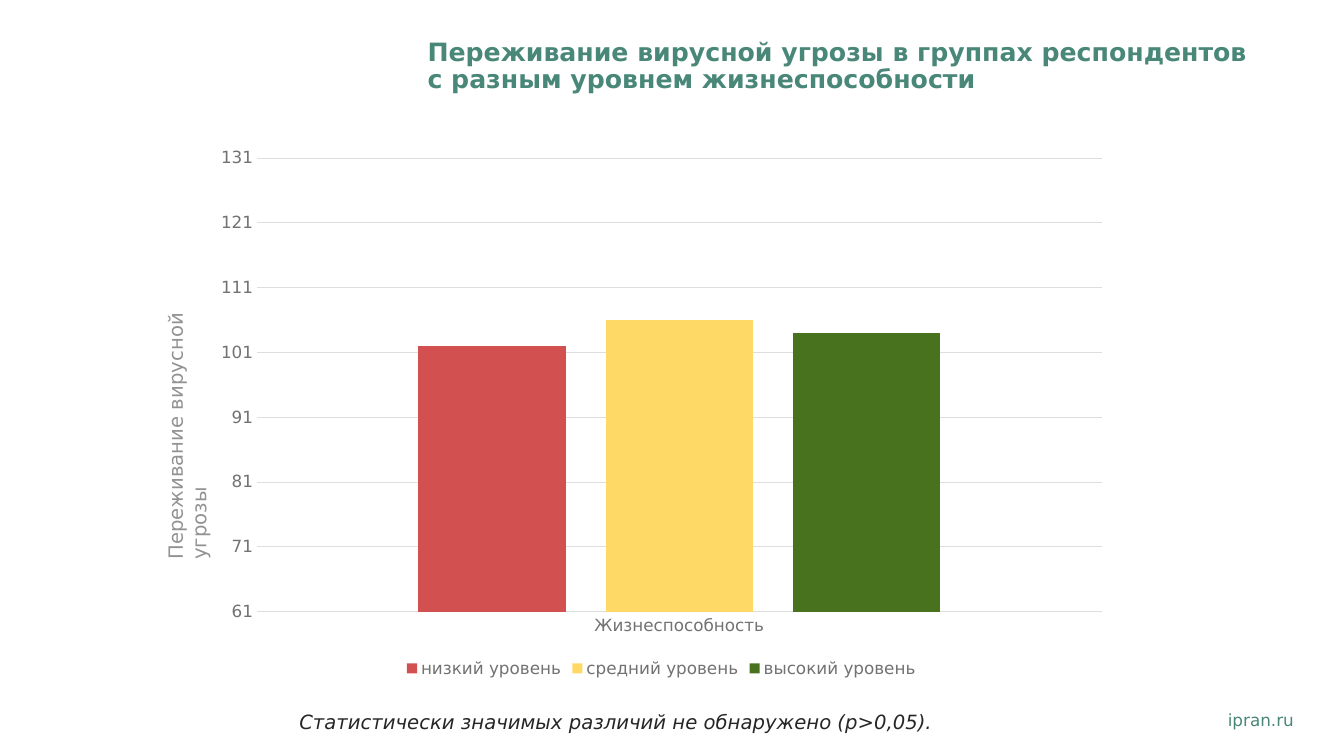
from pptx import Presentation
from pptx import util as u
from pptx.chart.data import CategoryChartData
from pptx.dml.color import RGBColor
from pptx.enum import chart as charts, text

FONT = "DejaVu Sans"
COLORS = {
    "green": "498779",
    "ink": "262626",
    "axis": "727272",
    "label": "929292",
    "grid": "DEDEDE",
}
LEVELS = [
    ("низкий уровень", 102, "D25050"),
    ("средний уровень", 106, "FFD966"),
    ("высокий уровень", 104, "49721E"),
]


def inches(*box):
    return [u.Inches(value) for value in box]


def style_font(font, size, color, bold=False, italic=False):
    font.name = FONT
    font.size = u.Pt(size)
    font.bold = bold
    font.italic = italic
    font.color.rgb = RGBColor.from_string(COLORS[color])


def add_title(slide, box, wording):
    title = slide.shapes.title
    title.left, title.top, title.width, title.height = inches(*box)
    frame = title.text_frame
    frame.word_wrap = True
    frame.auto_size = text.MSO_AUTO_SIZE.NONE
    frame.vertical_anchor = text.MSO_ANCHOR.TOP
    para = frame.paragraphs[0]
    para.alignment = text.PP_ALIGN.LEFT
    para.line_spacing = 0.9
    span = para.add_run()
    span.text = wording
    style_font(span.font, 18, "green", bold=True)


def add_label(slide, box, wording, size, color, italic=False, rotation=0):
    label = slide.shapes.add_textbox(*inches(*box))
    label.rotation = rotation
    frame = label.text_frame
    frame.word_wrap = True
    frame.auto_size = text.MSO_AUTO_SIZE.SHAPE_TO_FIT_TEXT
    span = frame.paragraphs[0].add_run()
    span.text = wording
    style_font(span.font, size, color, italic=italic)


def style_line(line):
    line.color.rgb = RGBColor.from_string(COLORS["grid"])
    line.width = u.Pt(0.75)


def add_level_chart(slide, box):
    data = CategoryChartData()
    data.categories = ["Жизнеспособность"]
    for name, value, _ in LEVELS:
        data.add_series(name, [value])
    chart = slide.shapes.add_chart(
        charts.XL_CHART_TYPE.COLUMN_CLUSTERED, *inches(*box), data).chart
    chart.has_title = False
    style_font(chart.font, 10, "ink")

    # Columns
    plot = chart.plots[0]
    plot.vary_by_categories = False
    plot.gap_width = 219
    plot.overlap = -27
    for series, (_, _, color) in zip(plot.series, LEVELS):
        series.format.fill.solid()
        series.format.fill.fore_color.rgb = RGBColor.from_string(color)

    # Axes
    for axis in (chart.category_axis, chart.value_axis):
        axis.major_tick_mark = charts.XL_TICK_MARK.NONE
        axis.minor_tick_mark = charts.XL_TICK_MARK.NONE
        style_font(axis.tick_labels.font, 12, "axis")
    style_line(chart.category_axis.format.line)
    values = chart.value_axis
    values.minimum_scale, values.maximum_scale = 61, 137
    values.major_unit = 10
    values.format.line.fill.background()
    style_line(values.major_gridlines.format.line)

    # Legend
    chart.has_legend = True
    chart.legend.position = charts.XL_LEGEND_POSITION.BOTTOM
    chart.legend.include_in_layout = False
    style_font(chart.legend.font, 12, "axis")


def build_slide(deck):
    page = deck.slides.add_slide(deck.slide_layouts[5])
    add_title(page, (4.14, 0.34, 8.4, 0.56),
              "Переживание вирусной угрозы в группах респондентов "
              "с разным уровнем жизнеспособности")
    add_level_chart(page, (2.01, 1.07, 9.1, 5.7))
    # Value axis caption, conclusion and site address
    add_label(page, (0.04, 3.78, 3.4, 0.34), "Переживание вирусной угрозы",
              14, "label", rotation=270)
    add_label(page, (2.87, 6.99, 7.59, 0.34),
              "Статистически значимых различий не обнаружено (p>0,05).",
              14, "ink", italic=True)
    add_label(page, (12.08, 6.99, 1.04, 0.3), "ipran.ru", 12, "green")


def main():
    deck = Presentation()
    deck.slide_width, deck.slide_height = inches(13.33, 7.5)
    build_slide(deck)
    deck.save("out.pptx")


if __name__ == "__main__":
    main()
